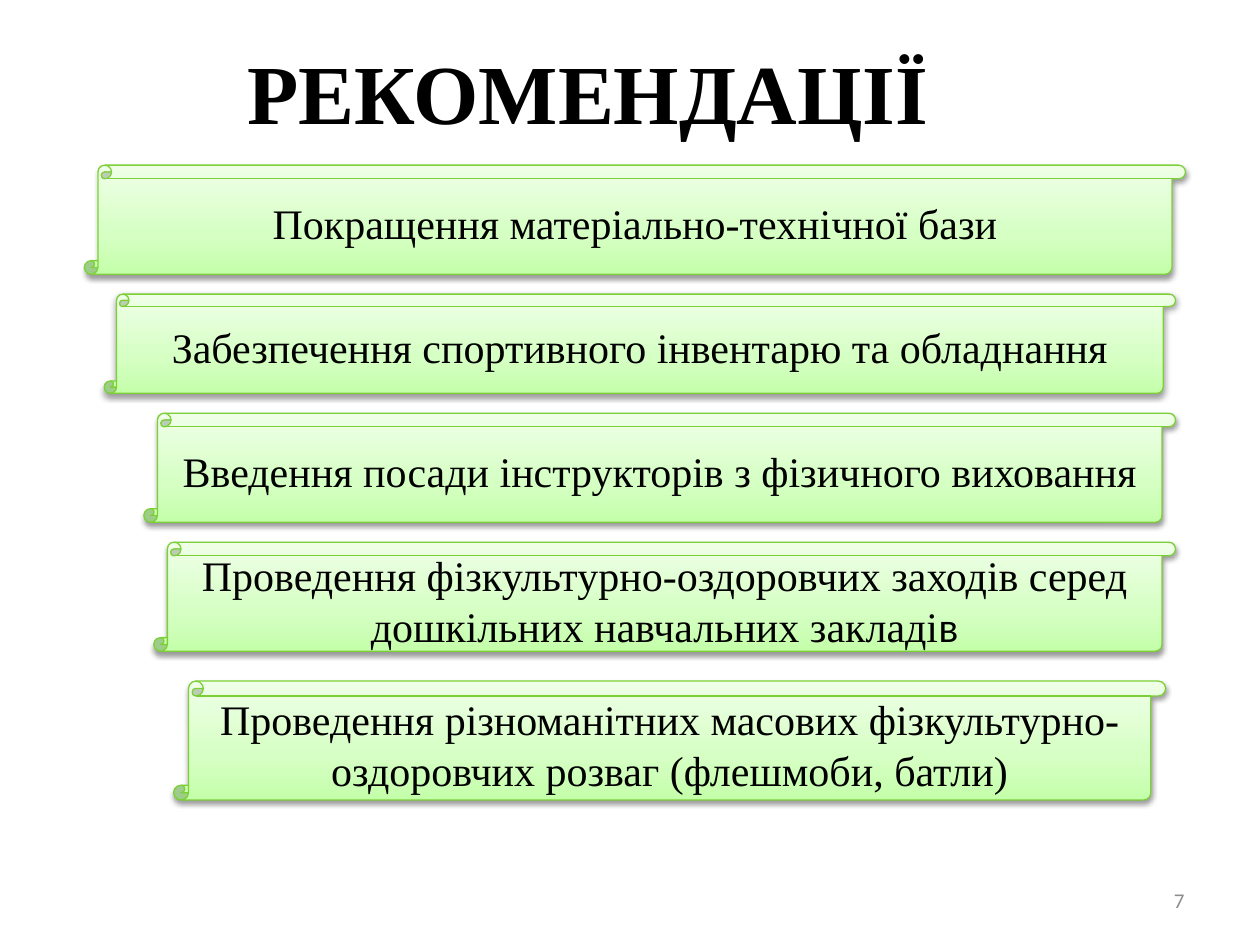
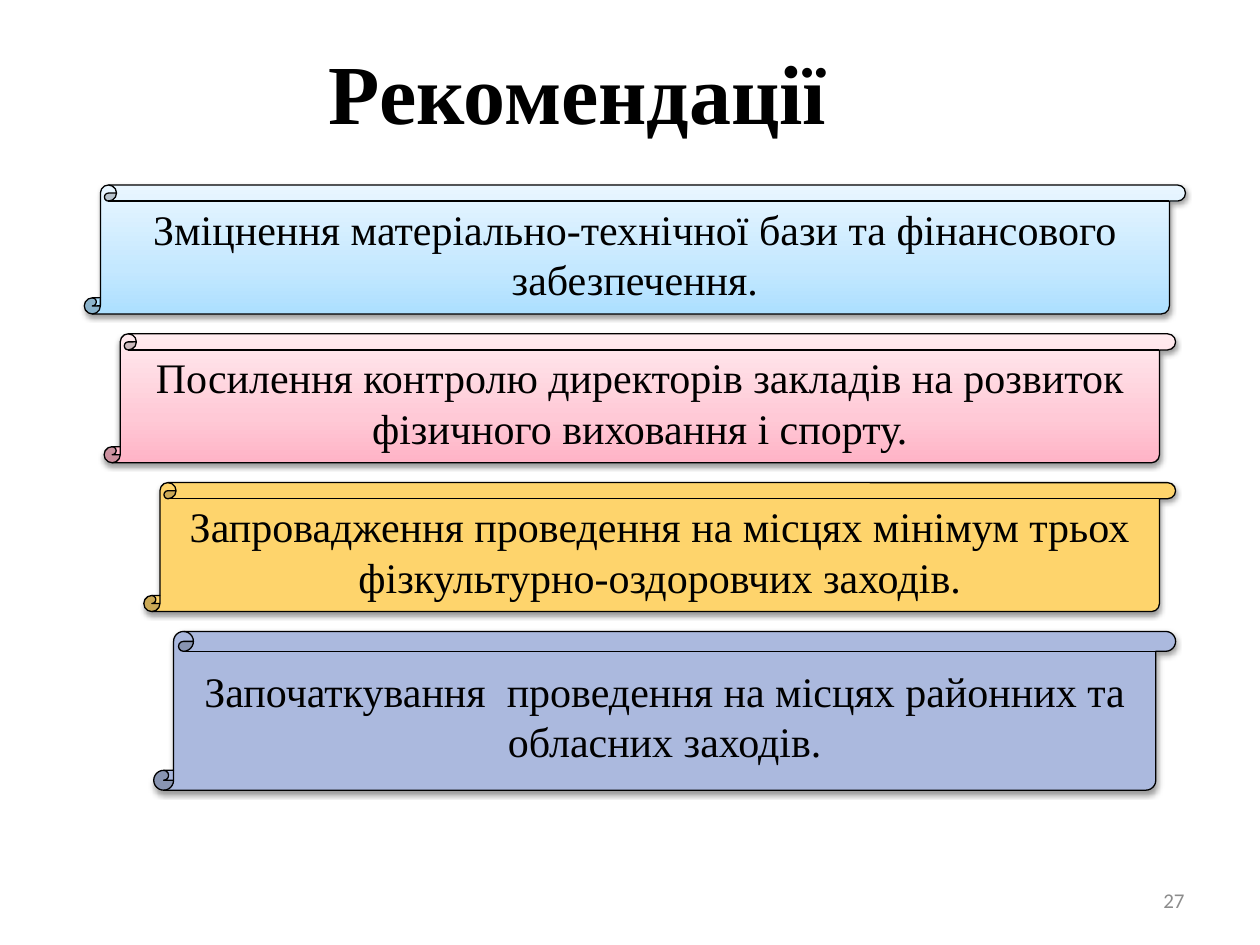
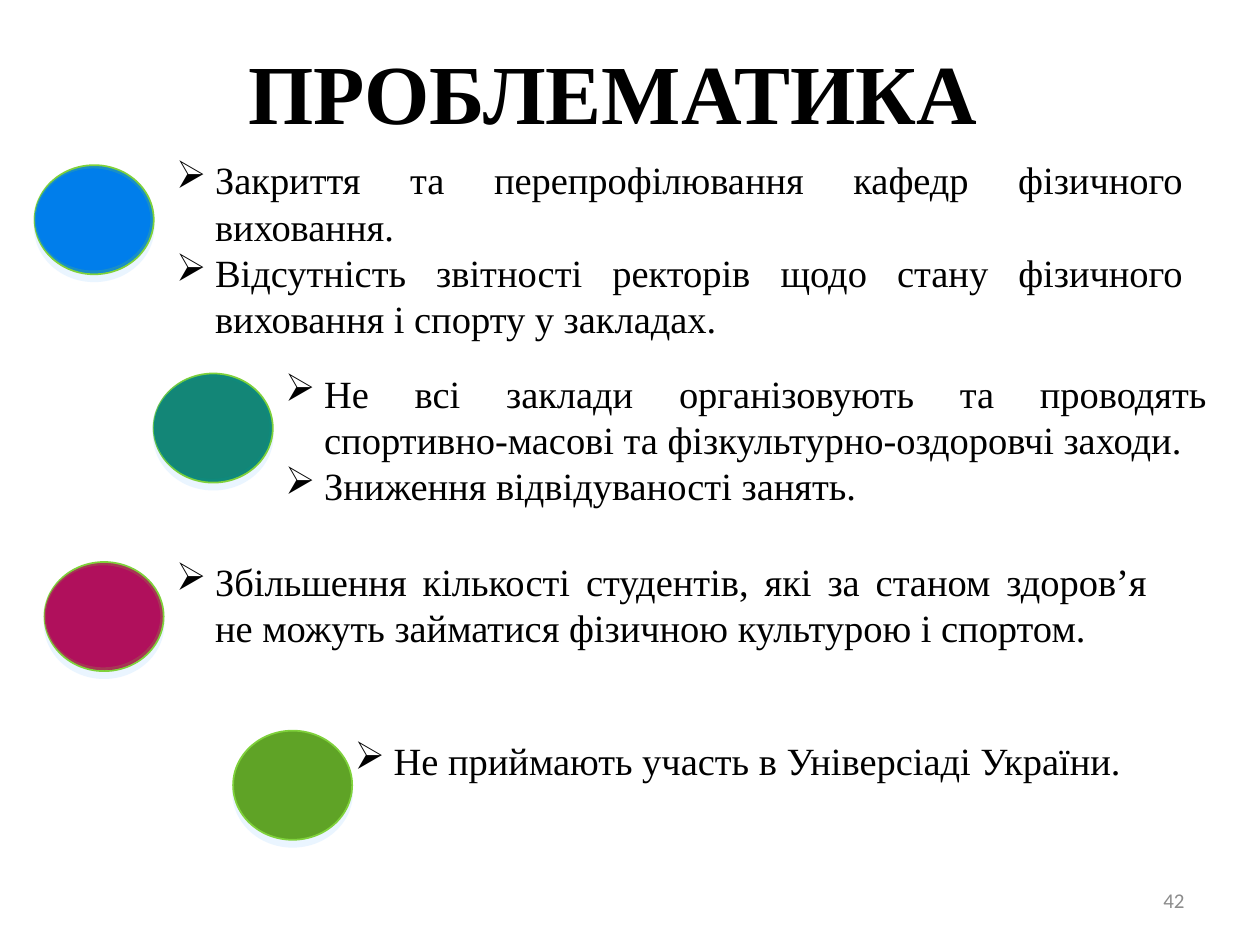
from copy import deepcopy
from dataclasses import dataclass
from lxml.etree import SubElement
from pptx import Presentation
from pptx.dml.color import RGBColor
from pptx.enum.shapes import MSO_SHAPE
from pptx.enum.text import MSO_ANCHOR, PP_ALIGN
from pptx.oxml.ns import qn
from pptx.util import Inches, Mm, Pt

COLORS = {
    "text": "000000",
    "number": "8C8C8C",
    "line": "7CD036",
    "accent": "7FD13B",
    "teal_ring": "039790",
    "blue": "007EEB",
    "teal": "138677",
    "crimson": "B0105C",
    "green": "5FA326",
    "yellow": "FED46C",
    "lavender": "ABB9DE",
    "glow": "D6ECFF",
}
GRADIENTS = {
    "light_green": ["C4FFAA", "D5FFC3", "EFFFE8"],
    "light_blue": ["ACDFFF", "C4E8FF", "E9F6FF"],
    "pink": ["FFB3C6", "FFC9D6", "FFEBEF"],
}
GRADIENT_POSITIONS = [0, 0.35, 1]
SERIF, SANS = "Times New Roman", "Calibri"


@dataclass
class Box:
    left: float
    top: float
    width: float
    height: float

    def inside(self, left, top, width, height):
        return Box(self.left + left, self.top + top, width, height)

    def lengths(self):
        return [Mm(side) for side in (self.left, self.top, self.width, self.height)]


TITLE = Box(0, 5.3, 237.2, 26)
NUMBER = Box(182, 176.5, 59.3, 10.1)
BODY = Box(7, 33.3, 240, 140)


def color(name):
    return RGBColor.from_string(COLORS[name])


def add_span(para, text, size, font=SERIF, shade="text", bold=False):
    span = para.add_run()
    span.text = text
    span.font.name = font
    span.font.size = Pt(size)
    span.font.bold = bold
    span.font.color.rgb = color(shade)


def add_text_frame(page, box, anchor):
    frame = page.shapes.add_textbox(*box.lengths()).text_frame
    frame.word_wrap = True
    frame.vertical_anchor = anchor
    return frame


def add_page(deck, title, number, title_shift=0):
    page = deck.slides.add_slide(deck.slide_layouts[6])
    box = TITLE.inside(title_shift, 0, TITLE.width, TITLE.height)
    para = add_text_frame(page, box, MSO_ANCHOR.MIDDLE).paragraphs[0]
    para.alignment = PP_ALIGN.CENTER
    add_span(para, title, 48, bold=True)
    para = add_text_frame(page, NUMBER, MSO_ANCHOR.MIDDLE).paragraphs[0]
    para.alignment = PP_ALIGN.RIGHT
    add_span(para, str(number), 12, SANS, "number")
    return page


def set_fill(shape, name):
    if name not in GRADIENTS:
        shape.fill.solid()
        shape.fill.fore_color.rgb = color(name)
        return
    shape.fill.gradient()
    shape.fill.gradient_angle = 90
    stop_list = shape._element.spPr.find(".//" + qn("a:gsLst"))
    stop_list.append(deepcopy(stop_list[0]))
    for stop, shade, position in zip(
        shape.fill.gradient_stops, GRADIENTS[name], GRADIENT_POSITIONS
    ):
        stop.color.rgb = RGBColor.from_string(shade)
        stop.position = position


def add_alpha(element, percent):
    SubElement(element, qn("a:alpha"), val=str(percent * 1000))


def add_shadow(shape, shade, percent, blur, distance):
    effects = shape._element.spPr.find(qn("a:effectLst"))
    shadow = SubElement(
        effects, qn("a:outerShdw"), blurRad=str(Pt(blur)), dist=str(Pt(distance)),
        dir="5400000", rotWithShape="0",
    )
    add_alpha(SubElement(shadow, qn("a:srgbClr"), val=COLORS[shade]), percent)


def add_figure(page, kind, box, fill, line, line_width):
    shape = page.shapes.add_shape(kind, *box.lengths())
    shape.shadow.inherit = False
    set_fill(shape, fill)
    shape.line.color.rgb = color(line)
    shape.line.width = Pt(line_width)
    return shape


def add_scrolls(page, box, scrolls, gap=4):
    top = 0
    for left, width, height, fill, line, spans in scrolls:
        place = box.inside(left, top, width, height)
        scroll = add_figure(page, MSO_SHAPE.VERTICAL_SCROLL, place, fill, line, 0.75)
        add_shadow(scroll, "text", 38, 3.15, 1.57)
        scroll.text_frame.vertical_anchor = MSO_ANCHOR.MIDDLE
        para = scroll.text_frame.paragraphs[0]
        para.alignment = PP_ALIGN.CENTER
        for text, font in spans:
            add_span(para, text, 24, font)
        top += height + gap


def add_disc(page, box, fill, ring):
    disc = add_figure(page, MSO_SHAPE.OVAL, box, fill, "accent", 1)
    add_shadow(disc, "glow", 50, 0, 4)
    if ring:
        inner = box.inside(0, 0.4, box.width - 0.4, box.height - 0.9)
        rim = add_figure(page, MSO_SHAPE.OVAL, inner, fill, ring, 1.5)
        add_alpha(rim.line._ln.find(".//" + qn("a:srgbClr")), 20)


def add_bullets(page, box, items, alignment):
    frame = add_text_frame(page, box, MSO_ANCHOR.TOP)
    for index, item in enumerate(items):
        para = frame.add_paragraph() if index else frame.paragraphs[0]
        para.alignment = alignment
        properties = para._p.get_or_add_pPr()
        properties.set("marL", str(Inches(0.31)))
        properties.set("indent", str(-Inches(0.31)))
        SubElement(properties, qn("a:buChar"), char="➢")
        add_span(para, item, 22)


def build_measures(deck):
    page = add_page(deck, "РЕКОМЕНДАЦІЇ", 7)
    look = "light_green", "line"
    add_scrolls(page, BODY, [
        (10, 222, 22, "light_green", "accent",
         [("Покращення матеріально-технічної бази", SERIF)]),
        (14, 216, 20, *look,
         [("Забезпечення спортивного інвентарю та обладнання", SERIF)]),
        (22, 208, 22, *look,
         [("Введення посади інструкторів з фізичного виховання", SERIF)]),
        (24, 206, 22, *look,
         [("Проведення фізкультурно-оздоровчих заходів серед дошкільних "
           "навчальних закладі", SERIF), ("в", SANS)]),
    ])
    add_scrolls(page, BODY.inside(0, 104, 240, 24), [
        (28, 200, 24, *look,
         [("Проведення різноманітних масових фізкультурно-оздоровчих розваг "
           "(флешмоби, батли)", SERIF)]),
    ])


def build_support(deck):
    page = add_page(deck, "Рекомендації ", 27)
    add_scrolls(page, BODY.inside(0, 4, 240, 122), [
        (10, 222, 26, "light_blue", "text",
         [("Зміцнення матеріально-технічної бази та фінансового забезпечення.", SERIF)]),
        (14, 216, 26, "pink", "text",
         [("Посилення контролю директорів закладів на розвиток фізичного "
           "виховання і спорту.", SERIF)]),
        (22, 208, 26, "yellow", "text",
         [("Запровадження проведення на місцях мінімум трьох "
           "фізкультурно-оздоровчих заходів.", SERIF)]),
        (24, 206, 32, "lavender", "text",
         [("Започаткування  проведення на місцях районних та обласних заходів.", SERIF)]),
    ])


def build_problems(deck):
    page = add_page(deck, "ПРОБЛЕМАТИКА", 42, title_shift=5)
    justify, left = PP_ALIGN.JUSTIFY, PP_ALIGN.LEFT
    problems = [
        ((0, 0), "blue", "accent", (26, -3, 208, 57.4), justify,
         ["Закриття та перепрофілювання кафедр фізичного виховання.",
          "Відсутність звітності ректорів щодо стану фізичного виховання "
          "і спорту у закладах."]),
        ((24, 42), "teal", "teal_ring", (48, 40, 190.8, 30.7), justify,
         ["Не всі заклади організовують та проводять спортивно-масові та "
          "фізкультурно-оздоровчі заходи.",
          "Зниження відвідуваності занять."]),
        ((2, 80), "crimson", "accent", (26, 78, 204, 21.3), justify,
         ["Збільшення кількості студентів, які за станом здоров’я  не можуть "
          "займатися фізичною культурою і спортом."]),
        ((40, 114), "green", None, (62, 114, 174, 12), left,
         ["Не приймають участь в Універсіаді України."]),
    ]
    for corner, fill, ring, text_place, alignment, items in problems:
        add_bullets(page, BODY.inside(*text_place), items, alignment)
        add_disc(page, BODY.inside(*corner, 24, 22), fill, ring)


def main():
    deck = Presentation()
    deck.slide_width, deck.slide_height = Inches(10), Inches(7.5)
    build_measures(deck)
    build_support(deck)
    build_problems(deck)
    deck.save("out.pptx")


if __name__ == "__main__":
    main()
